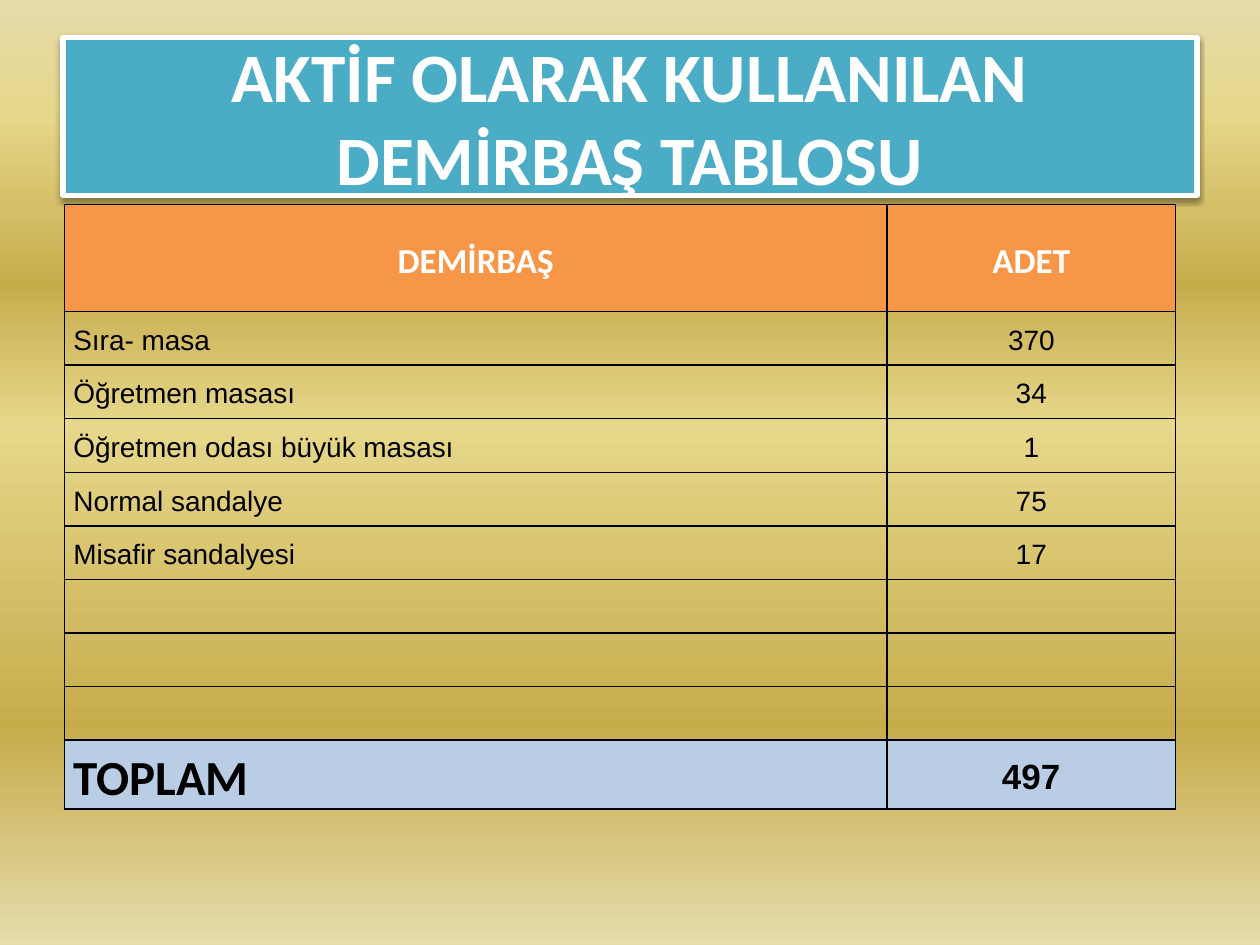
from lxml import etree
from pptx import Presentation
from pptx.dml.color import RGBColor as RGB
from pptx.enum.text import MSO_ANCHOR as Anchor, MSO_AUTO_SIZE as Fit, PP_ALIGN as Align
from pptx.oxml import parse_xml
from pptx.oxml.ns import nsdecls, qn
from pptx.util import Cm, Pt

COLORS = {"white": "FFFFFF", "black": "000000", "teal": "4BACC6",
          "orange": "F79646", "blue": "B9CDE5",
          "pale": "E6DCAC", "light": "E6D78A", "gold": "C7AC4C"}
STOPS = [(0, "pale"), (12, "light"), (30, "gold"),
         (45, "light"), (77, "gold"), (100, "pale")]
ROWS = [("DEMİRBAŞ", "ADET"), ("Sıra- masa", "370"), ("Öğretmen masası", "34"),
        ("Öğretmen odası büyük masası", "1"), ("Normal sandalye", "75"),
        ("Misafir sandalyesi", "17"), ("", ""), ("", ""), ("", ""),
        ("TOPLAM", "497")]


def style(para, size, face, color, bold):
    for run in para.runs:
        font = run.font
        font.size, font.name, font.bold = Pt(size), face, bold
        font.color.rgb = RGB.from_string(COLORS[color])


def border(cell):
    props = cell._tc.get_or_add_tcPr()
    for side in ("lnL", "lnR", "lnT", "lnB"):
        props.append(parse_xml(
            f'<a:{side} {nsdecls("a")} w="12700"><a:solidFill>'
            f'<a:srgbClr val="{COLORS["black"]}"/></a:solidFill></a:{side}>'))


prs = Presentation()
prs.slide_width, prs.slide_height = Cm(25.4), Cm(19.05)
slide = prs.slides.add_slide(prs.slide_layouts[5])

back = slide.background.fill
back.gradient()
back.gradient_angle = 270
stops = slide._element.find(".//" + qn("a:gsLst"))
for old in list(stops):
    stops.remove(old)
for pos, name in STOPS:
    stop = etree.SubElement(stops, qn("a:gs"), pos=str(pos * 1000))
    etree.SubElement(stop, qn("a:srgbClr"), val=COLORS[name])

title = slide.shapes.title
title.left, title.top, title.width, title.height = Cm(1.27), Cm(0.76), Cm(22.86), Cm(3.18)
title.fill.solid()
title.fill.fore_color.rgb = RGB.from_string(COLORS["teal"])
title.line.color.rgb = RGB.from_string(COLORS["white"])
title.line.width = Pt(3)
title._element.spPr.append(parse_xml(
    f'<a:effectLst {nsdecls("a")}><a:outerShdw blurRad="{Pt(3.1)}" dist="{Pt(1.6)}" '
    f'dir="5400000" rotWithShape="0"><a:srgbClr val="{COLORS["black"]}">'
    '<a:alpha val="38000"/></a:srgbClr></a:outerShdw></a:effectLst>'))
frame = title.text_frame
frame.text = "AKTİF OLARAK KULLANILAN DEMİRBAŞ TABLOSU"
frame.word_wrap = True
frame.auto_size = Fit.NONE
frame.vertical_anchor = Anchor.MIDDLE
frame.paragraphs[0].alignment = Align.CENTER
style(frame.paragraphs[0], 39.6, "Calibri", "white", True)

last = len(ROWS) - 1
table = slide.shapes.add_table(len(ROWS), 2, Cm(1.3), Cm(4.12), Cm(22.4), Cm(12.2)).table
table.columns[0].width, table.columns[1].width = Cm(16.58), Cm(5.82)
table.horz_banding = False
for r, row in enumerate(ROWS):
    table.rows[r].height = Cm({0: 2.16, last: 1.38}.get(r, 1.08))
    for c, text in enumerate(row):
        cell = table.cell(r, c)
        cell.margin_left = cell.margin_right = Cm(0.18)
        cell.margin_top = cell.margin_bottom = 0
        cell.vertical_anchor = Anchor.MIDDLE
        border(cell)
        if r in (0, last):
            cell.fill.solid()
            cell.fill.fore_color.rgb = RGB.from_string(COLORS["blue" if r else "orange"])
        else:
            cell.fill.background()
        para = cell.text_frame.paragraphs[0]
        para.text = text
        para.line_spacing = 1.15
        para.alignment = Align.CENTER if r == 0 or c == 1 else Align.LEFT
        if r == 0:
            style(para, 20, "Calibri", "white", True)
        elif r < last:
            style(para, 16, "Arial", "black", False)
        elif c == 0:
            style(para, 28, "Calibri", "black", True)
        else:
            style(para, 20, "Arial", "black", True)

prs.save("out.pptx")
